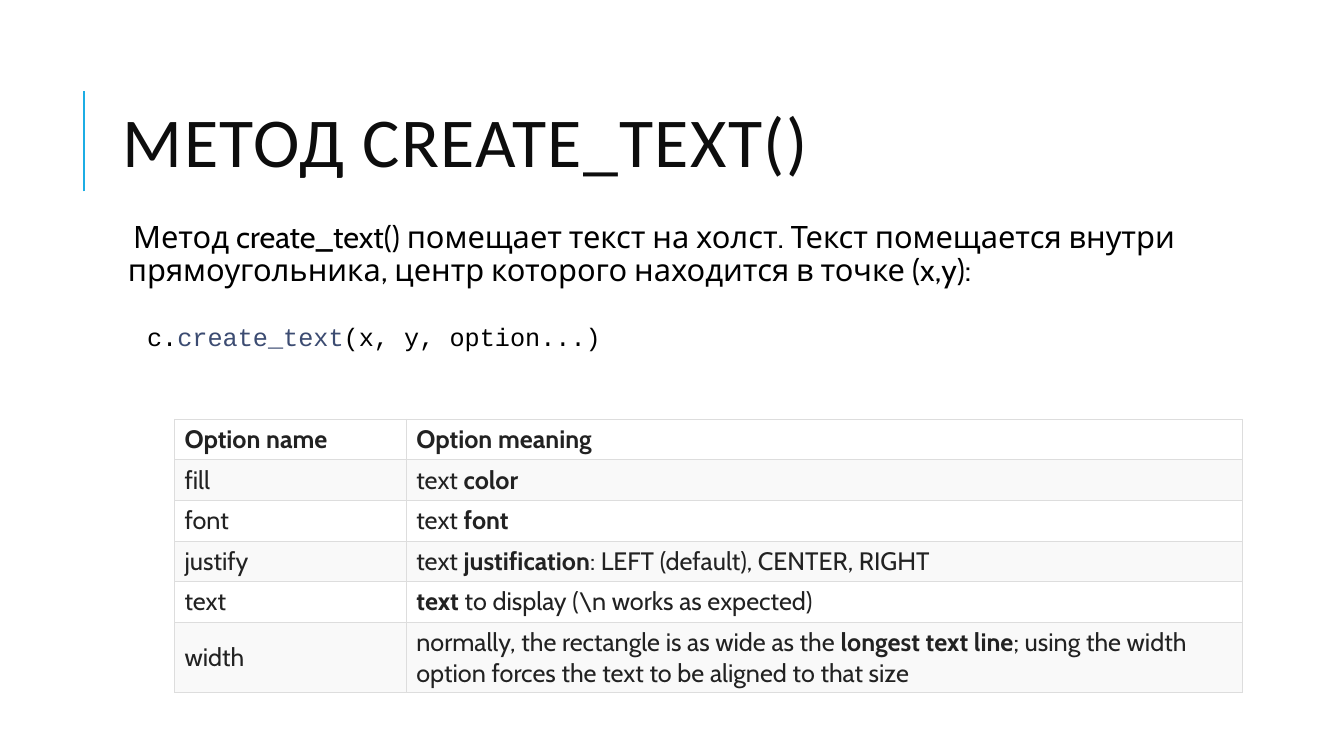
from dataclasses import dataclass

from lxml.etree import SubElement
from pptx import Presentation
from pptx.dml.color import RGBColor as Color
from pptx.enum.shapes import MSO_CONNECTOR as Connector
from pptx.enum.text import MSO_ANCHOR as Anchor, MSO_AUTO_SIZE as AutoSize, PP_ALIGN as Align
from pptx.oxml.ns import qn
from pptx.util import Inches, Pt


@dataclass
class Theme:
    accent: str = "1CADE4"
    heading: str = "0D0D0D"
    ink: str = "000000"
    method: str = "3C4C72"
    cell_ink: str = "222222"
    border: str = "DDDDDD"
    bands: tuple = ("FFFFFF", "F9F9F9")
    heading_size: int = 50
    lead_size: int = 22
    small_size: int = 18
    heading_font: str = "Calibri"
    body_font: str = "Cabin"
    code_font: str = "Courier New"


def write(paragraph, text, font, size, color, bold=False, spacing=0):
    run = paragraph.add_run()
    run.text = text
    run.font.name = font
    run.font.size = Pt(size)
    run.font.bold = bold
    run.font.color.rgb = Color.from_string(color)
    if spacing:
        run.font._element.set("spc", str(spacing * 100))


def place(left, top, width, height):
    return [round(column * left), round(row * top), round(column * width), round(row * height)]


theme = Theme()
deck = Presentation()
deck.slide_width, deck.slide_height = Inches(13.33), Inches(7.5)
column, row = deck.slide_width / 100, deck.slide_height / 100
slide = deck.slides.add_slide(deck.slide_layouts[5])

accent_x = round(column * 6.23)
accent = slide.shapes.add_connector(
    Connector.STRAIGHT, accent_x, round(row * 25.33), accent_x, round(row * 12))
accent.line.color.rgb = Color.from_string(theme.accent)
accent.line.width = Pt(1.5)
SubElement(accent._element.spPr, qn("a:effectLst"))

heading = slide.shapes.title
heading.left, heading.top, heading.width, heading.height = place(8.4, 8.53, 79.74, 21.87)
heading.text_frame.auto_size = AutoSize.NONE
heading.text_frame.vertical_anchor = Anchor.MIDDLE
heading_line = heading.text_frame.paragraphs[0]
heading_line.alignment = Align.LEFT
heading_line.line_spacing = 0.8
write(heading_line, "МЕТОД CREATE_TEXT()", theme.heading_font, theme.heading_size,
      theme.heading, spacing=1)

lead = slide.shapes.add_textbox(*place(8.4, 28.67, 82.52, 11.07)).text_frame
lead.word_wrap = True
lead.margin_left = lead.margin_right = lead.margin_top = lead.margin_bottom = Inches(0.05)
lead_line = lead.paragraphs[0]
lead_line.line_spacing = 0.9
lead_line.space_before, lead_line.space_after = Pt(12), Pt(2)
write(lead_line, "Метод create_text() помещает текст на холст. Текст помещается внутри "
      "прямоугольника, центр которого находится в точке (x,y):",
      theme.body_font, theme.lead_size, theme.ink)
lead_format = lead_line._p.get_or_add_pPr()
lead_format.set("marL", str(Inches(0.1)))
lead_format.set("indent", str(-Inches(0.1)))
bullet_color = SubElement(lead_format, qn("a:buClr"))
SubElement(bullet_color, qn("a:srgbClr"), val=theme.accent)
SubElement(lead_format, qn("a:buChar"), char=" ")

syntax = slide.shapes.add_textbox(*place(10.2, 41.87, 50, 5.33)).text_frame
syntax.word_wrap = True
syntax.auto_size = AutoSize.SHAPE_TO_FIT_TEXT
for part, color in [("c.", theme.ink), ("create_text", theme.method),
                    ("(x, y, option...)", theme.ink)]:
    write(syntax.paragraphs[0], part, theme.code_font, theme.small_size, color)

options = [
    ("*Option name*", "*Option meaning*"),
    ("fill", "text *color*"),
    ("font", "text *font*"),
    ("justify", "text *justification*: LEFT (default), CENTER, RIGHT"),
    ("text", r"*text* to display (\n works as expected)"),
    ("width", "normally, the rectangle is as wide as the *longest text line*; "
              "using the width option forces the text to be aligned to that size"),
]
table = slide.shapes.add_table(len(options), 2, *place(12.98, 55.47, 79.44, 36)).table
table.first_row = table.horz_banding = False
for table_column, share in zip(table.columns, (17.25, 62.19)):
    table_column.width = round(column * share)
for index, option in enumerate(options):
    table.rows[index].height = round(row * (9.2 if option[0] == "width" else 5.37))
    for position, content in enumerate(option):
        cell = table.cell(index, position)
        cell.vertical_anchor = Anchor.MIDDLE
        for side in ("lnL", "lnR", "lnT", "lnB"):
            edge = SubElement(cell._tc.get_or_add_tcPr(), qn(f"a:{side}"), w=str(Pt(0.75)))
            edge_fill = SubElement(edge, qn("a:solidFill"))
            SubElement(edge_fill, qn("a:srgbClr"), val=theme.border)
        cell.fill.solid()
        cell.fill.fore_color.rgb = Color.from_string(theme.bands[index % 2])
        for order, part in enumerate(content.split("*")):
            if part:
                write(cell.text_frame.paragraphs[0], part, theme.body_font,
                      theme.small_size, theme.cell_ink, bold=order % 2 == 1)

deck.save("out.pptx")
